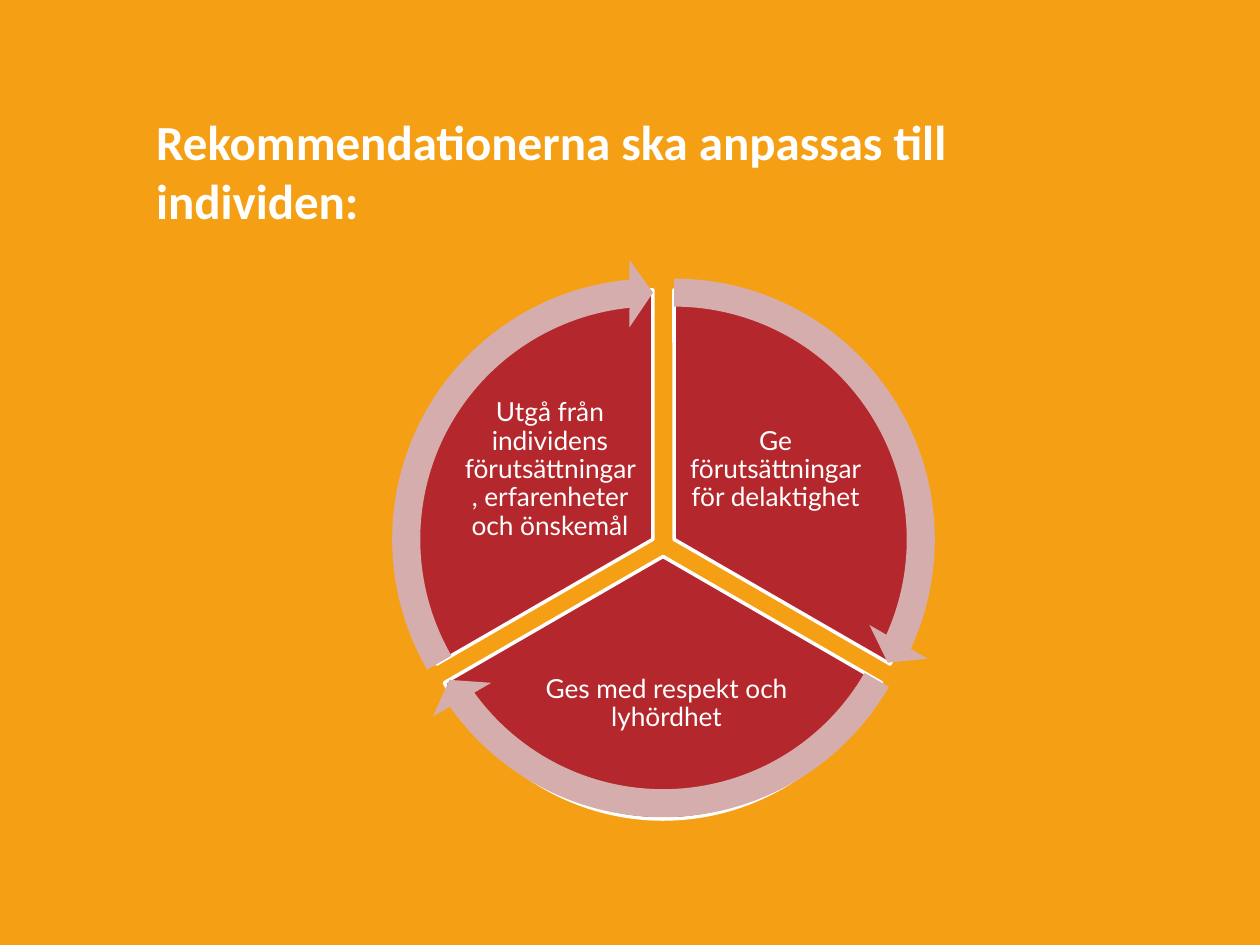
from pptx import Presentation
from pptx.dml.color import RGBColor
from pptx.enum import shapes, text
from pptx.util import Pt

TITLE = "Rekommendationerna ska anpassas till individen:"
ORANGE, RED, PINK, WHITE = "F5A014", "B4282D", "D6ADAD", "FFFFFF"
PIE_W, ARROW_D = 285, 320.4
STEPS = [
    dict(text="Ge förutsättningar för delaktighet", center=(385.2, 308.2),
         height=285, pie=(162, 18), arrow=(14.72, 161.99),
         box=(392.4, 226.1, 101.5, 85)),
    dict(text="Ges med respekt och lyhördhet", center=(378.9, 318),
         height=300, pie=(18, 90), arrow=(86.72, 18),
         box=(304.6, 362.9, 152.6, 78.5)),
    dict(text="Utgå från individens förutsättningar, erfarenheter och önskemål",
         center=(373.1, 308.2), height=285, pie=(90, 162), arrow=(158.73, 90),
         box=(263.5, 226.1, 101.5, 85)),
]


def rgb(c):
    return RGBColor.from_string(c)


def set_font(p, name, size, bold=False):
    p.font.name, p.font.size, p.font.bold = name, Pt(size), bold
    p.font.color.rgb = rgb(WHITE)


def add_centered(parent, kind, center, w, h, fill, adjustments):
    x, y = center
    sp = parent.shapes.add_shape(kind, Pt(x - w / 2), Pt(y - h / 2), Pt(w), Pt(h))
    sp.shadow.inherit = False
    for i, value in enumerate(adjustments):
        sp.adjustments[i] = value
    sp.fill.solid()
    sp.fill.fore_color.rgb = rgb(fill)
    sp.line.fill.background()
    return sp


def add_slice(parent, step):
    x, y = step["center"]
    top = y - PIE_W / 2
    middle = (x, top + step["height"] / 2)
    if step["height"] > PIE_W:
        middle = step["center"]
    sp = add_centered(parent, shapes.MSO_SHAPE.PIE, middle, PIE_W,
                      step["height"], RED, step["pie"])
    sp.line.color.rgb = rgb(WHITE)
    sp.line.width = Pt(2)


def add_label(parent, step):
    tf = parent.shapes.add_textbox(*map(Pt, step["box"])).text_frame
    tf.word_wrap = True
    tf.vertical_anchor = text.MSO_ANCHOR.MIDDLE
    tf.margin_left = tf.margin_right = tf.margin_top = tf.margin_bottom = Pt(1.4)
    p = tf.paragraphs[0]
    p.text = step["text"]
    p.alignment = text.PP_ALIGN.CENTER
    p.line_spacing = 0.9
    set_font(p, "Lato", 15)


def main():
    prs = Presentation()
    prs.slide_width, prs.slide_height = Pt(720), Pt(540)
    s = prs.slides.add_slide(prs.slide_layouts[0])
    s.background.fill.solid()
    s.background.fill.fore_color.rgb = rgb(ORANGE)
    subtitle = s.placeholders[1].element
    subtitle.getparent().remove(subtitle)

    title = s.shapes.title
    title.left, title.top, title.width, title.height = map(Pt, (82, 46, 553, 147.6))
    tf = title.text_frame
    tf.text = TITLE
    tf.word_wrap = True
    tf.auto_size = text.MSO_AUTO_SIZE.NONE
    tf.vertical_anchor = text.MSO_ANCHOR.BOTTOM
    tf.margin_bottom = Pt(62.5)
    p = tf.paragraphs[0]
    p.alignment = text.PP_ALIGN.LEFT
    set_font(p, "Calibri", 28, bold=True)

    cycle = s.shapes.add_group_shape()
    for step in STEPS:
        add_slice(cycle, step)
        add_label(cycle, step)
    for step in STEPS:
        add_centered(cycle, shapes.MSO_SHAPE.CIRCULAR_ARROW, step["center"],
                     ARROW_D, ARROW_D, PINK,
                     (0.05, 3.28, *step["arrow"], 0.06))
    prs.save("out.pptx")


if __name__ == "__main__":
    main()
